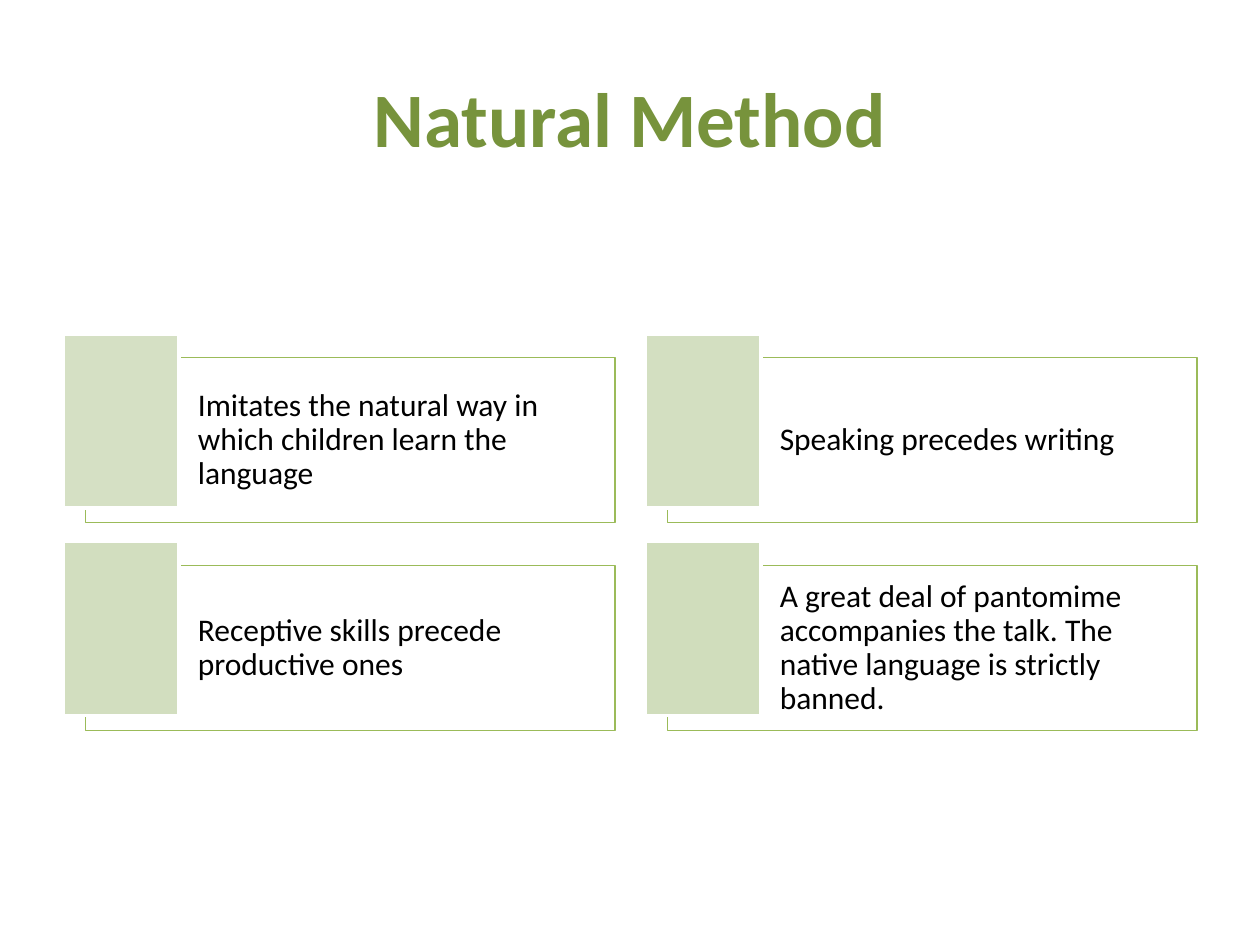
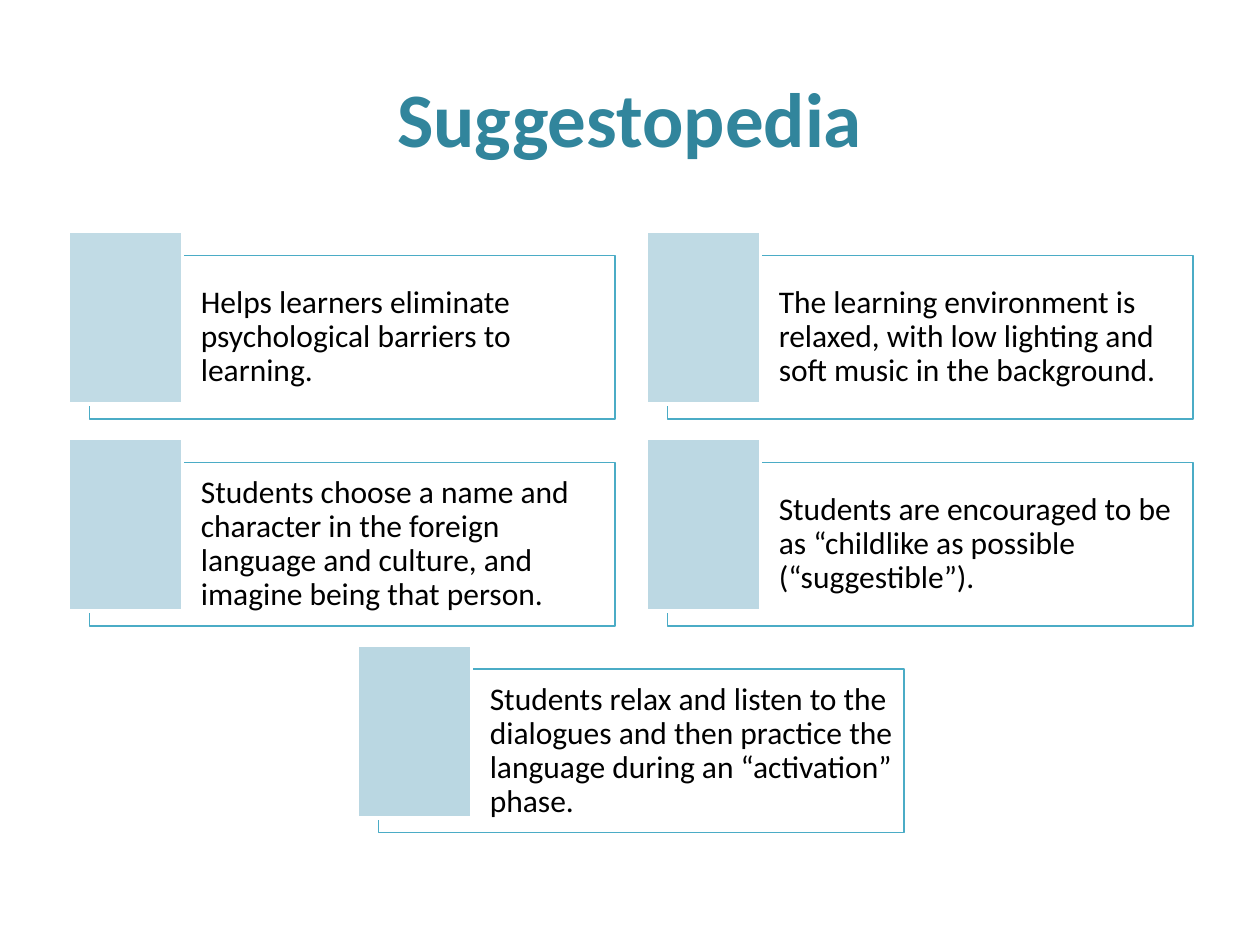
from dataclasses import dataclass

from lxml import etree
from pptx import Presentation
from pptx import util as u
from pptx.dml.color import RGBColor
from pptx.enum import shapes, text
from pptx.oxml.ns import qn


@dataclass(frozen=True)
class Theme:
    font: str = "Calibri"
    title_size: int = 44
    body_size: int = 18
    ink: str = "000000"
    paper: str = "FFFFFF"
    panel_opacity: int = 55
    panel_line: float = 0.75
    tile_line: float = 2


THEME = Theme()
SLIDE_W, SLIDE_H = 25.4, 19.05
TITLE_BOX = (1.27, 0.76, 22.86, 3.18)
COLUMNS = 2

# Colours, grid measures (cm) and statements of each method
METHODS = [
    dict(title="Natural Method", title_color="77933C", line="9BBB59",
         tints=("D5E0C4", "D0DDBC"),
         origin=(1.27, 6.73), pitch=(11.73, 4.19),
         tile=(2.34, 3.51), panel=(0.46, 0.48, 10.67, 3.33), indent=2.26,
         statements=[
             "Imitates the natural way in which children learn the language",
             "Speaking precedes writing",
             "Receptive skills precede productive ones",
             "A great deal of pantomime accompanies the talk. "
             "The native language is strictly banned.",
         ]),
    dict(title="Suggestopedia", title_color="31859C", line="4BACC6",
         tints=("C1DBE5", "BAD7E2"),
         origin=(1.37, 4.67), pitch=(11.65, 4.17),
         tile=(2.31, 3.48), panel=(0.44, 0.48, 10.59, 3.3), indent=2.24,
         statements=[
             "Helps learners eliminate psychological barriers to learning.",
             "The learning environment is relaxed, with low lighting and "
             "soft music in the background.",
             "Students choose a name and character in the foreign language "
             "and culture, and imagine being that person.",
             "Students are encouraged to be as “childlike as possible "
             "(“suggestible”).",
             "Students relax and listen to the dialogues and then practice "
             "the language during an “activation” phase.",
         ]),
]


def rgb(value):
    return RGBColor.from_string(value)


def blend(start, end, share):
    """Colour that lies at the given share of the way from start to end."""
    pairs = zip(bytes.fromhex(start), bytes.fromhex(end))
    return RGBColor(*(round(a + (b - a) * share) for a, b in pairs))


def apply(target, formats):
    for name, value in formats.items():
        setattr(target, name, value)


def write(frame, words, frame_formats, paragraph_formats, font_formats, color):
    apply(frame, {"word_wrap": True,
                  "vertical_anchor": text.MSO_ANCHOR.MIDDLE, **frame_formats})
    paragraph = frame.paragraphs[0]
    apply(paragraph, paragraph_formats)
    run = paragraph.add_run()
    run.text = words
    apply(run.font, {"name": THEME.font, **font_formats})
    run.font.color.rgb = rgb(color)


def add_rect(slide, box, fill, line, width):
    rect = slide.shapes.add_shape(shapes.MSO_SHAPE.RECTANGLE, *map(u.Cm, box))
    rect.shadow.inherit = False
    rect.fill.solid()
    rect.fill.fore_color.rgb = fill
    rect.line.color.rgb = rgb(line)
    rect.line.width = u.Pt(width)
    return rect


def set_opacity(shape, percent):
    color = shape.fill._xPr.find(qn("a:solidFill"))[0]
    etree.SubElement(color, qn("a:alpha"), val=str(percent * 1000))


def add_title(slide, box, words, color):
    heading = slide.shapes.add_textbox(*map(u.Cm, box))
    write(heading.text_frame, words, {},
          {"alignment": text.PP_ALIGN.CENTER},
          {"size": u.Pt(THEME.title_size), "bold": True}, color)


def add_statement(slide, left, top, method, words, tint):
    # Outlined panel with the statement
    dx, dy, width, height = method["panel"]
    panel = add_rect(slide, (left + dx, top + dy, width, height),
                     rgb(THEME.paper), method["line"], THEME.panel_line)
    set_opacity(panel, THEME.panel_opacity)
    margins = {f"margin_{side}": u.Cm(0.18) for side in ("top", "right", "bottom")}
    write(panel.text_frame, words,
          {**margins, "margin_left": u.Cm(method["indent"])},
          {"alignment": text.PP_ALIGN.LEFT, "line_spacing": 0.9},
          {"size": u.Pt(THEME.body_size)}, THEME.ink)

    # Tinted tile over the panel's corner
    add_rect(slide, (left, top, *method["tile"]), tint, THEME.paper, THEME.tile_line)


def add_statement_grid(slide, method):
    left, top = method["origin"]
    step_x, step_y = method["pitch"]
    statements = method["statements"]
    for index, words in enumerate(statements):
        row, column = divmod(index, COLUMNS)
        in_row = min(COLUMNS, len(statements) - row * COLUMNS)
        shift = (COLUMNS - in_row) / 2  # centres a short last row
        tint = blend(*method["tints"], index / (len(statements) - 1))
        add_statement(slide, left + (column + shift) * step_x,
                      top + row * step_y, method, words, tint)


def add_method_slide(deck, method):
    slide = deck.slides.add_slide(deck.slide_layouts[6])
    add_title(slide, TITLE_BOX, method["title"], method["title_color"])
    add_statement_grid(slide, method)


def main():
    deck = Presentation()
    apply(deck, {"slide_width": u.Cm(SLIDE_W), "slide_height": u.Cm(SLIDE_H)})
    for method in METHODS:
        add_method_slide(deck, method)
    deck.save("out.pptx")


if __name__ == "__main__":
    main()
